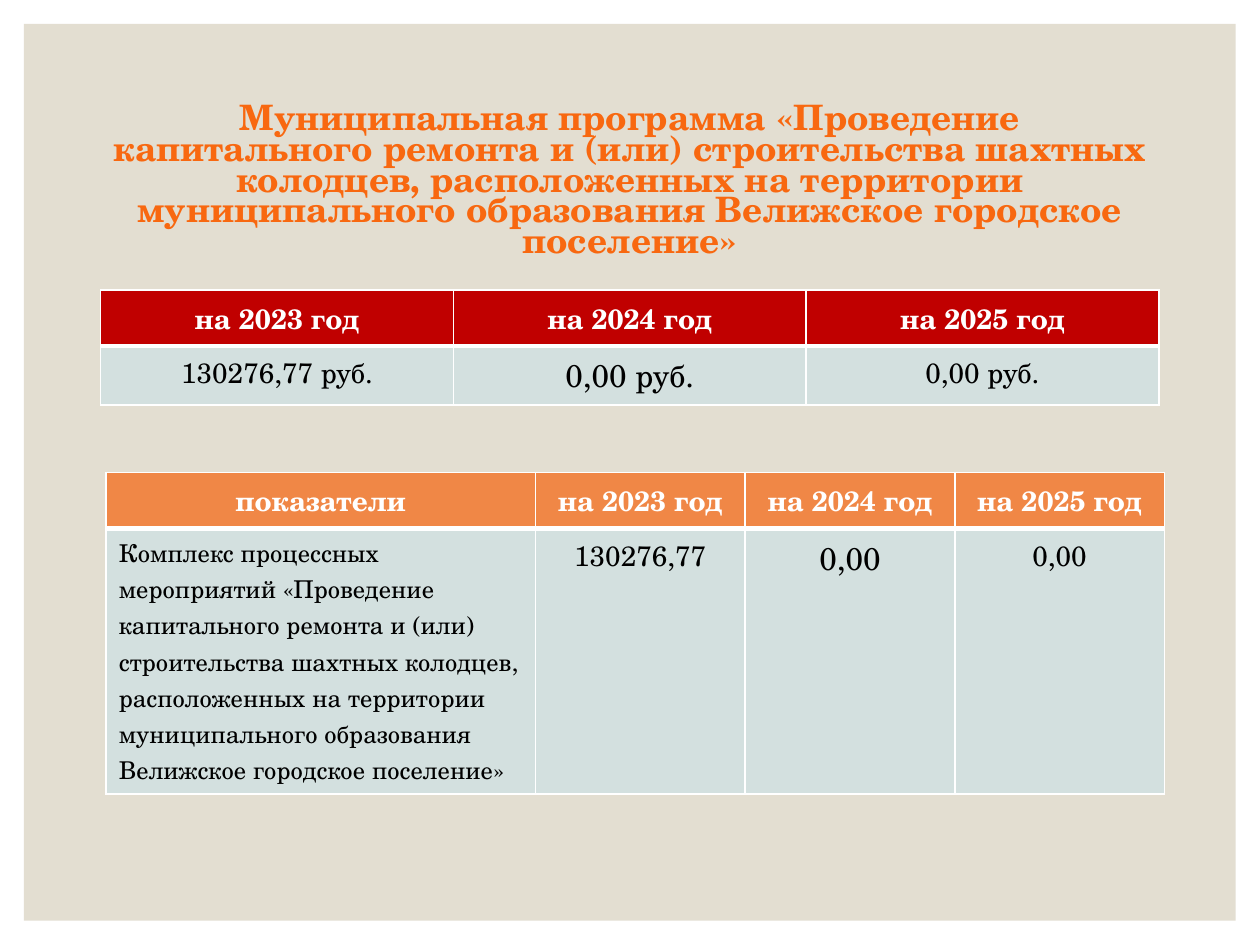
import pptx
import pptx.dml.color
import pptx.enum.shapes
import pptx.enum.text
import pptx.oxml
import pptx.oxml.ns
import pptx.util
from pptx.util import Cm

FONT = "TeX Gyre Schola"
COLORS = {
    "panel": "E3DED1",
    "title": "F86810",
    "budget_header": "C00000",
    "indicator_header": "F08746",
    "body": "D3E0DF",
    "white": "FFFFFF",
    "black": "000000",
}
PROGRAM = (
    "«Проведение капитального ремонта и (или) строительства шахтных колодцев, "
    "расположенных на территории муниципального образования "
    "Велижское городское поселение»"
)
TITLE = "Муниципальная программа " + PROGRAM
YEARS = ["на 2023 год", "на 2024 год", "на 2025 год"]
ROW_HEIGHT = 1.03

# Body cells are (text, size in points, alignment); lengths are in centimetres.
TABLES = [
    {
        "position": (2.03, 5.85),
        "columns": [7.11, 7.11, 7.11],
        "header_color": "budget_header",
        "header": YEARS,
        "body": [
            ("130276,77 руб.", 16, "CENTER"),
            ("0,00 руб.", 18, "CENTER"),
            ("0,00 руб.", 16, "CENTER"),
        ],
    },
    {
        "position": (2.14, 9.53),
        "columns": [8.65, 4.23, 4.23, 4.22],
        "header_color": "indicator_header",
        "header": ["показатели"] + YEARS,
        "body": [
            ("Комплекс процессных мероприятий " + PROGRAM, 14, "LEFT"),
            ("130276,77", 16, "CENTER"),
            ("0,00", 18, "CENTER"),
            ("0,00", 16, "CENTER"),
        ],
    },
]


def rgb(name):
    return pptx.dml.color.RGBColor.from_string(COLORS[name])


def write_text(text_frame, text, size, color, bold, alignment="CENTER"):
    paragraph = text_frame.paragraphs[0]
    paragraph.alignment = getattr(pptx.enum.text.PP_ALIGN, alignment)
    run = paragraph.add_run()
    run.text = text
    font_format = {"name": FONT, "size": pptx.util.Pt(size), "bold": bold}
    for attribute, value in font_format.items():
        setattr(run.font, attribute, value)
    run.font.color.rgb = rgb(color)
    return paragraph


def set_borders(cell, widths):
    """Add white cell borders; widths maps each side tag to points."""
    properties = cell._tc.get_or_add_tcPr()
    for index, (side, width) in enumerate(widths.items()):
        line = pptx.oxml.parse_xml(
            f'<a:{side} {pptx.oxml.ns.nsdecls("a")} w="{pptx.util.Pt(width)}">'
            f'<a:solidFill><a:srgbClr val="{COLORS["white"]}"/></a:solidFill>'
            f"</a:{side}>"
        )
        properties.insert(index, line)


def add_panel(slide):
    panel = slide.shapes.add_shape(
        pptx.enum.shapes.MSO_SHAPE.RECTANGLE, Cm(0.48), Cm(0.48), Cm(24.43), Cm(18.08)
    )
    panel.shadow.inherit = False
    panel.fill.solid()
    panel.fill.fore_color.rgb = rgb("panel")
    panel.line.fill.background()
    slide.shapes.title.element.addprevious(panel.element)


def add_title(slide):
    title = slide.shapes.title
    placement = {"left": 2.03, "top": 1.78, "width": 21.34, "height": 3.81}
    for attribute, value in placement.items():
        setattr(title, attribute, Cm(value))
    frame_format = {
        "word_wrap": True,
        "auto_size": pptx.enum.text.MSO_AUTO_SIZE.NONE,
        "vertical_anchor": pptx.enum.text.MSO_ANCHOR.MIDDLE,
    }
    for attribute, value in frame_format.items():
        setattr(title.text_frame, attribute, value)
    paragraph = write_text(title.text_frame, TITLE, 20, "title", True)
    paragraph.line_spacing = 0.73


def add_budget_table(slide, content):
    columns = content["columns"]
    left, top = content["position"]
    table = slide.shapes.add_table(
        2, len(columns), Cm(left), Cm(top), Cm(sum(columns)), Cm(2 * ROW_HEIGHT)
    ).table
    for column, width in zip(table.columns, columns):
        column.width = Cm(width)

    header = [(text, 16, "CENTER") for text in content["header"]]
    rows = [
        (header, content["header_color"], "white", True, 1, 3),
        (content["body"], "body", "black", False, 3, 1),
    ]
    for row, (texts, fill, color, bold, upper, lower) in zip(table.rows, rows):
        row.height = Cm(ROW_HEIGHT)
        for cell, (text, size, alignment) in zip(row.cells, texts):
            cell.fill.solid()
            cell.fill.fore_color.rgb = rgb(fill)
            write_text(cell.text_frame, text, size, color, bold, alignment)
            set_borders(cell, {"lnL": 1, "lnR": 1, "lnT": upper, "lnB": lower})


def main():
    presentation = pptx.Presentation()
    presentation.slide_width = Cm(25.4)
    presentation.slide_height = Cm(19.05)
    slide = presentation.slides.add_slide(
        presentation.slide_layouts.get_by_name("Title Only")
    )
    add_panel(slide)
    add_title(slide)
    for content in TABLES:
        add_budget_table(slide, content)
    presentation.save("out.pptx")


if __name__ == "__main__":
    main()
